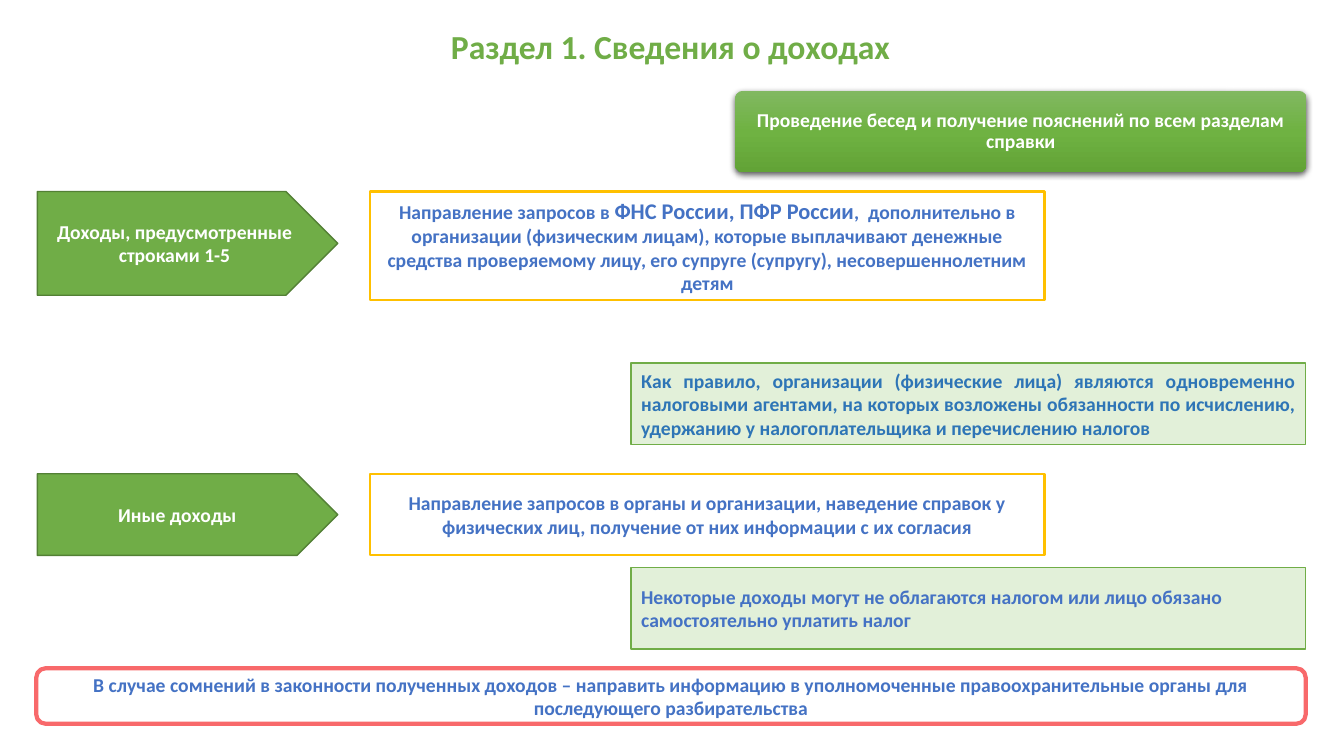
from copy import deepcopy

from pptx import Presentation
from pptx.dml.color import RGBColor
from pptx.enum.shapes import MSO_SHAPE as Preset
from pptx.enum.text import MSO_ANCHOR as Anchor, PP_ALIGN as Align
from pptx.oxml import parse_xml
from pptx.oxml.ns import qn
from pptx.util import Inches, Pt

GREEN, DARK_GREEN, PALE_GREEN = "70AD47", "538035", "E2F0D9"
BLUE, DEEP_BLUE, GOLD, RED, WHITE = "4472C4", "2E75B6", "FFC000", "F8696B", "FFFFFF"
BANNER_STOPS = [(0, "81B861"), (0.5, "6FB242"), (1, "62A336")]
SHADOW = (
    '<a:effectLst xmlns:a="http://schemas.openxmlformats.org/drawingml/2006/main">'
    '<a:outerShdw blurRad="57150" dist="19050" dir="5400000" algn="ctr" rotWithShape="0">'
    '<a:srgbClr val="000000"><a:alpha val="63000"/></a:srgbClr>'
    '</a:outerShdw></a:effectLst>'
)


def color(value):
    return RGBColor.from_string(value)


def write(shape, runs, text_color, align=Align.CENTER, anchor=Anchor.MIDDLE, spacing=None):
    frame = shape.text_frame
    frame.word_wrap = True
    frame.vertical_anchor = anchor
    frame.margin_left = frame.margin_right = Inches(0.1)
    frame.margin_top = frame.margin_bottom = Inches(0.05)
    paragraph = frame.paragraphs[0]
    paragraph.alignment = align
    paragraph.line_spacing = spacing
    for text, size in runs:
        run = paragraph.add_run()
        run.text = text
        run.font.name = "Calibri"
        run.font.size = Pt(size)
        run.font.bold = True
        run.font.color.rgb = color(text_color)


def add_box(slide, preset, box, fill=None, line=None, width=1):
    shape = slide.shapes.add_shape(preset, *map(Inches, box))
    shape.shadow.inherit = False
    if fill:
        shape.fill.solid()
        shape.fill.fore_color.rgb = color(fill)
    else:
        shape.fill.background()
    if line:
        shape.line.color.rgb = color(line)
        shape.line.width = Pt(width)
    else:
        shape.line.fill.background()
    return shape


def add_title(slide, box, text):
    title = slide.shapes.title
    title.left, title.top, title.width, title.height = map(Inches, box)
    write(title, [(text, 24)], GREEN, anchor=Anchor.TOP)


def add_banner(slide, box, text):
    banner = add_box(slide, Preset.ROUNDED_RECTANGLE, box)
    banner.adjustments[0] = 0.1
    banner.fill.gradient()
    banner.fill.gradient_angle = 270
    properties = banner._element.spPr
    stop_list = properties.find(qn("a:gradFill")).find(qn("a:gsLst"))
    stop_list.insert(1, deepcopy(stop_list[0]))
    for stop, (position, value) in zip(banner.fill.gradient_stops, BANNER_STOPS):
        stop.position = position
        stop.color.rgb = color(value)
    properties.replace(properties.find(qn("a:effectLst")), parse_xml(SHADOW))
    write(banner, [(text, 14)], WHITE, spacing=0.9)


def add_income_row(slide, box, arrow_height, label, request):
    left, top, width, height = box
    arrow_width, request_left = 2.98, 3.3
    arrow = add_box(slide, Preset.PENTAGON, (left, top, arrow_width, arrow_height), GREEN, DARK_GREEN)
    write(arrow, [(label, 14)], WHITE)
    request_box = (left + request_left, top, width - request_left, height)
    write(add_box(slide, Preset.RECTANGLE, request_box, WHITE, GOLD, 1.5), request, BLUE)


def add_note(slide, box, text, text_color, align):
    note = add_box(slide, Preset.RECTANGLE, box, PALE_GREEN, GREEN)
    write(note, [(text, 14)], text_color, align)


def add_warning(slide, box, text):
    warning = add_box(slide, Preset.ROUNDED_RECTANGLE, box, line=RED, width=3)
    write(warning, [(text, 14)], BLUE)


def main():
    presentation = Presentation()
    presentation.slide_width = Inches(13.33)
    presentation.slide_height = Inches(7.5)
    slide = presentation.slides.add_slide(presentation.slide_layouts[5])

    add_title(slide, (0.58, 0.21, 12.14, 0.5), "Раздел 1. Сведения о доходах")
    add_banner(slide, (7.29, 0.9, 5.67, 0.81),
               "Проведение бесед и получение пояснений по всем разделам справки")
    add_income_row(slide, (0.37, 1.9, 9.99, 1.08), 1.03, "Доходы, предусмотренные строками 1-5", [
        ("Направление запросов в ", 14),
        ("ФНС России, ПФР России", 16),
        (",  дополнительно в организации (физическим лицам), которые выплачивают денежные "
         "средства проверяемому лицу, его супруге (супругу), несовершеннолетним детям", 14),
    ])
    add_note(slide, (6.26, 3.6, 6.69, 0.81),
             "Как правило, организации (физические лица) являются одновременно налоговыми "
             "агентами, на которых возложены обязанности по исчислению, удержанию у "
             "налогоплательщика и перечислению налогов", DEEP_BLUE, Align.JUSTIFY)
    add_income_row(slide, (0.37, 4.7, 9.99, 0.81), 0.81, "Иные доходы", [
        ("Направление запросов в органы и организации, наведение справок у физических лиц, "
         "получение от них информации с их согласия", 14),
    ])
    add_note(slide, (6.26, 5.63, 6.69, 0.81),
             "Некоторые доходы могут не облагаются налогом или лицо обязано самостоятельно "
             "уплатить налог", BLUE, Align.LEFT)
    add_warning(slide, (0.36, 6.63, 12.59, 0.55),
                "В случае сомнений в законности полученных доходов – направить информацию в "
                "уполномоченные правоохранительные органы для последующего разбирательства")
    presentation.save("out.pptx")


if __name__ == "__main__":
    main()
